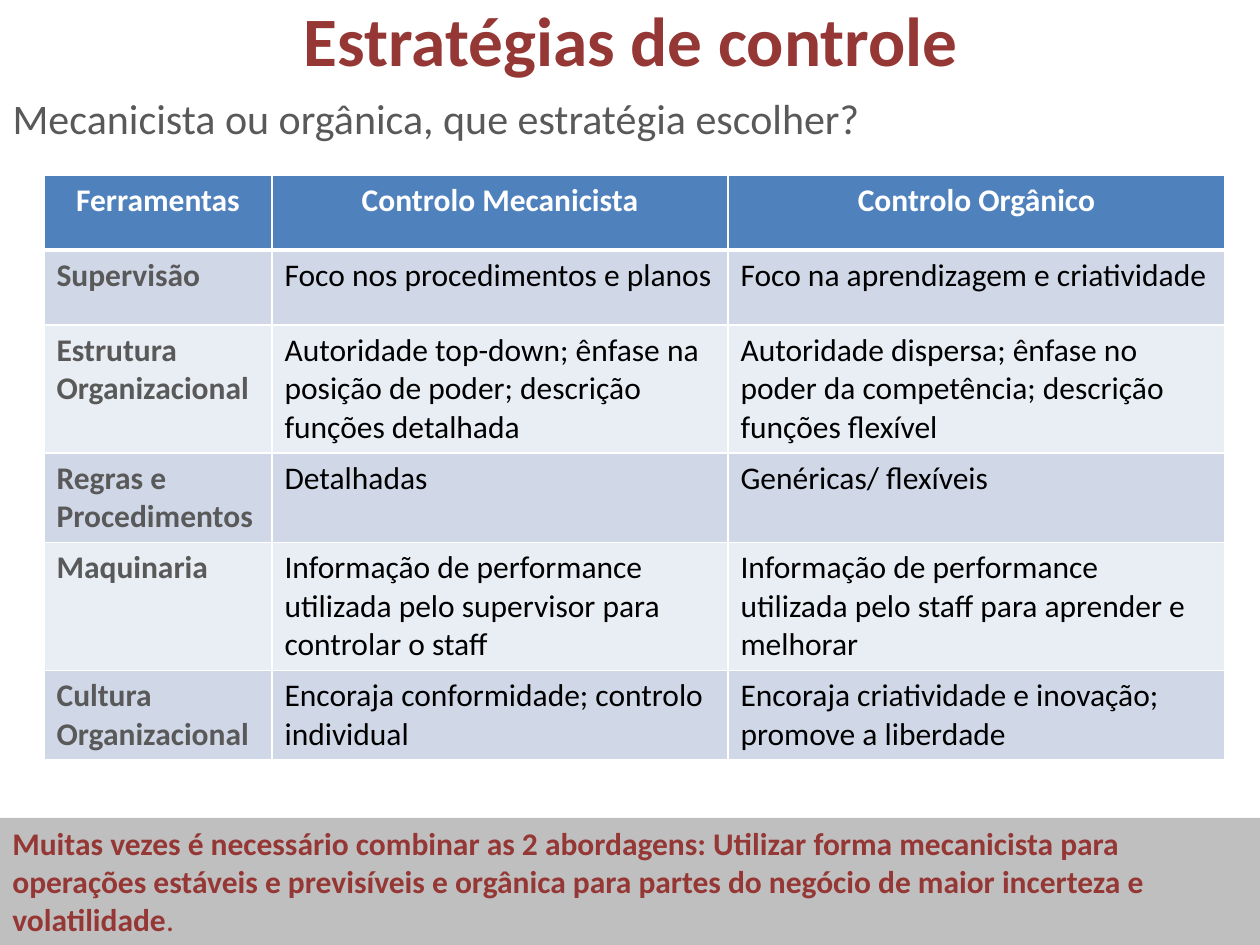
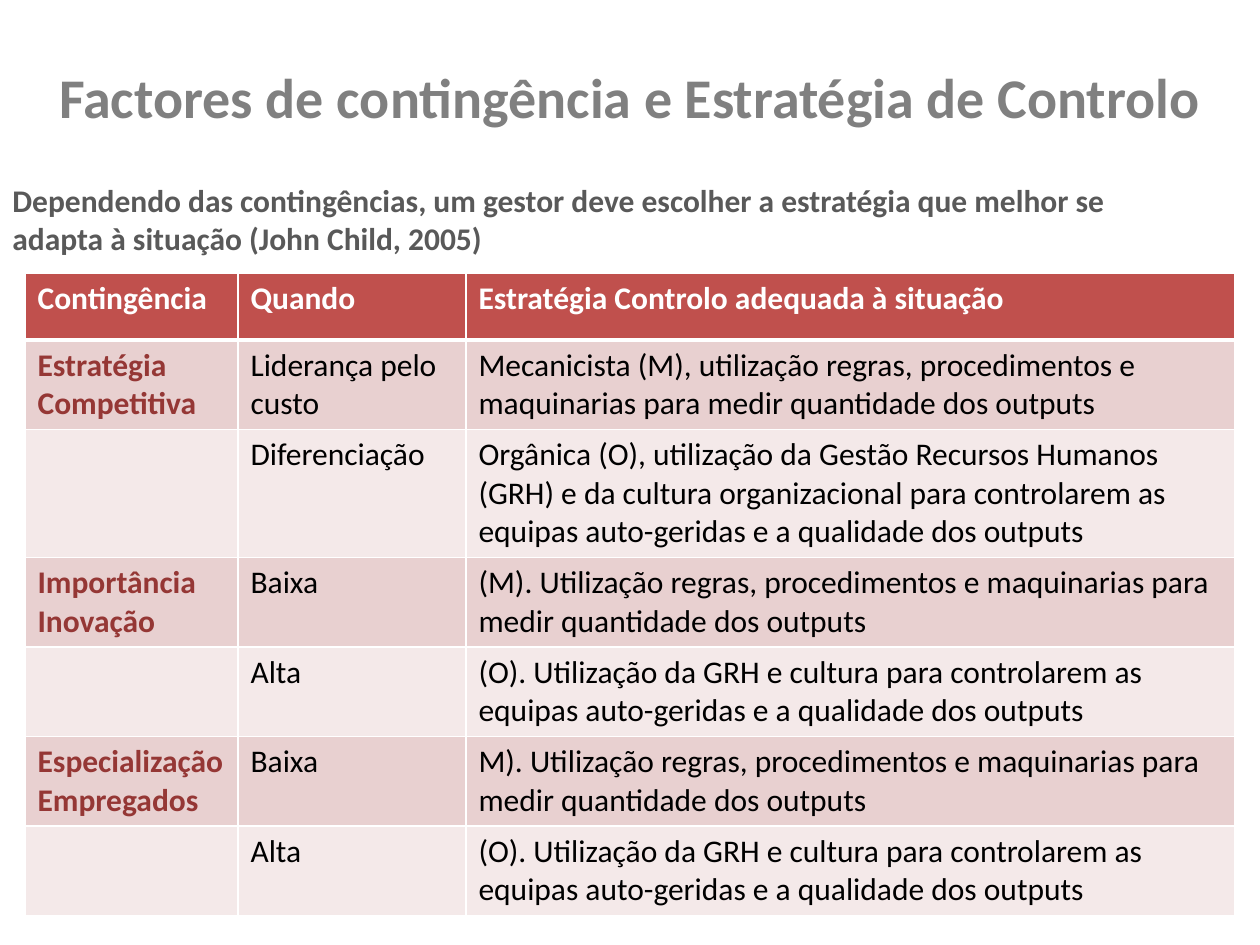
from lxml import etree
from pptx import Presentation, util as u
from pptx.dml.color import RGBColor
from pptx.enum import shapes, text
from pptx.oxml import ns

FONT = "Calibri"
WHITE = RGBColor(0xFF, 0xFF, 0xFF)
BLACK = RGBColor(0x00, 0x00, 0x00)
WINE = RGBColor(0x95, 0x37, 0x35)
DARK_GREY = RGBColor(0x59, 0x59, 0x59)
MID_GREY = RGBColor(0x80, 0x80, 0x80)
BAND_GREY = RGBColor(0xBF, 0xBF, 0xBF)
BLUES = [RGBColor(0x4F, 0x81, 0xBD), RGBColor(0xD0, 0xD8, 0xE8), RGBColor(0xE9, 0xED, 0xF4)]
REDS = [RGBColor(0xC0, 0x50, 0x4D), RGBColor(0xE8, 0xD0, 0xD0), RGBColor(0xF4, 0xE9, 0xE9)]
LEFT, CENTER = text.PP_ALIGN.LEFT, text.PP_ALIGN.CENTER

STRATEGIES = [
    ("Ferramentas", "Controlo Mecanicista", "Controlo Orgânico"),
    ("Supervisão", "Foco nos procedimentos e planos", "Foco na aprendizagem e criatividade"),
    ("Estrutura Organizacional",
     "Autoridade top-down; ênfase na posição de poder; descrição funções detalhada",
     "Autoridade dispersa; ênfase no poder da competência; descrição funções flexível"),
    ("Regras e Procedimentos", "Detalhadas", "Genéricas/ flexíveis"),
    ("Maquinaria",
     "Informação de performance utilizada pelo supervisor para controlar o staff",
     "Informação de performance utilizada pelo staff para aprender e melhorar"),
    ("Cultura Organizacional", "Encoraja conformidade; controlo individual",
     "Encoraja criatividade e inovação; promove a liberdade"),
]
RULES = "Utilização regras, procedimentos e maquinarias para medir quantidade dos outputs"
CULTURE = ("(O). Utilização da GRH e cultura para controlarem as equipas auto-geridas "
           "e a qualidade dos outputs")
CONTINGENCIES = [
    ("Contingência", "Quando", "Estratégia Controlo adequada à situação"),
    ("Estratégia Competitiva", "Liderança pelo custo",
     "Mecanicista (M), utilização regras, procedimentos e maquinarias para medir "
     "quantidade dos outputs"),
    ("", "Diferenciação",
     "Orgânica (O), utilização da Gestão Recursos Humanos (GRH) e da cultura organizacional "
     "para controlarem as equipas auto-geridas e a qualidade dos outputs"),
    ("Importância Inovação", "Baixa", "(M). " + RULES),
    ("", "Alta", CULTURE),
    ("Especialização Empregados", "Baixa", "M). " + RULES),
    ("", "Alta", CULTURE),
]


def px(count):
    """Turn pixels into EMU."""
    return u.Emu(round(count * 914400 / 126))


def style_text(frame, size, color, bold=False, align=LEFT):
    """Format every paragraph and run of a text frame."""
    for para in frame.paragraphs:
        para.alignment = align
        for span in para.runs:
            span.font.name = FONT
            span.font.size = u.Pt(size)
            span.font.bold = bold
            span.font.color.rgb = color


def place(shape, box):
    """Move a shape to a left, top, width, height box."""
    shape.left, shape.top, shape.width, shape.height = map(px, box)


def add_title(page, box, words, size, color):
    """Fill and move the title placeholder."""
    title = page.shapes.title
    place(title, box)
    frame = title.text_frame
    frame.text = words
    frame.auto_size = text.MSO_AUTO_SIZE.NONE
    frame.vertical_anchor = text.MSO_ANCHOR.MIDDLE
    style_text(frame, size, color, True, CENTER)


def add_question(page, box, words):
    """Fill and move the body placeholder, without a bullet."""
    body = page.placeholders[1]
    place(body, box)
    frame = body.text_frame
    frame.text = words
    frame.auto_size = text.MSO_AUTO_SIZE.NONE
    style_text(frame, 24, DARK_GREY)
    props = frame.paragraphs[0]._p.get_or_add_pPr()
    props.set("marL", str(px(48)))
    props.set("indent", str(-px(48)))
    etree.SubElement(props, ns.qn("a:buNone"))


def add_note(page, box, words, color, fill=None, ending=""):
    """Add a bold remark, on a coloured band if a fill is given."""
    if fill is None:
        note = page.shapes.add_textbox(*map(px, box))
    else:
        note = page.shapes.add_shape(shapes.MSO_SHAPE.RECTANGLE, *map(px, box))
        note.shadow.inherit = False
        note.fill.solid()
        note.fill.fore_color.rgb = fill
        note.line.fill.background()
    frame = note.text_frame
    frame.word_wrap = True
    frame.vertical_anchor = text.MSO_ANCHOR.TOP
    frame.text = words
    if ending:
        frame.paragraphs[0].add_run().text = ending
    style_text(frame, 18, color, True)
    if ending:
        frame.paragraphs[0].runs[-1].font.bold = False


def set_borders(cell, top, bottom):
    """Draw white cell borders with the given top and bottom points."""
    props = cell._tc.get_or_add_tcPr()
    widths = {"a:lnL": 1, "a:lnR": 1, "a:lnT": top, "a:lnB": bottom}
    for index, (tag, width) in enumerate(widths.items()):
        line = etree.Element(ns.qn(tag), w=str(u.Pt(width)))
        solid = etree.SubElement(line, ns.qn("a:solidFill"))
        etree.SubElement(solid, ns.qn("a:srgbClr"), val=str(WHITE))
        props.insert(index, line)


def add_grid(page, corner, widths, heights, rows, fills, label_color, header_align):
    """Add a banded table with a header row and a bold first column."""
    frame = page.shapes.add_table(len(rows), len(widths), *map(px, (*corner, sum(widths), sum(heights))))
    table = frame.table
    for column, width in zip(table.columns, widths):
        column.width = px(width)
    for r, (height, words) in enumerate(zip(heights, rows)):
        table.rows[r].height = px(height)
        header = r == 0
        fill = fills[0] if header else fills[2 - r % 2]
        for c, value in enumerate(words):
            cell = table.cell(r, c)
            cell.text = value
            cell.fill.solid()
            cell.fill.fore_color.rgb = fill
            color = WHITE if header else label_color if c == 0 else BLACK
            style_text(cell.text_frame, 18, color, header or c == 0,
                       header_align if header else LEFT)
            set_borders(cell, 3 if r == 1 else 1, 3 if header else 1)


def build_strategies(deck):
    """Build the slide that compares the two control strategies."""
    page = deck.slides.add_slide(deck.slide_layouts[1])
    add_title(page, (64, 0, 1134, 77), "Estratégias de controle", 39.6, WINE)
    add_question(page, (0, 86, 1134, 79), "Mecanicista ou orgânica, que estratégia escolher?")
    add_grid(page, (44, 175), (228, 456, 497), (75, 75, 128, 89, 128, 89),
             STRATEGIES, BLUES, DARK_GREY, CENTER)
    add_note(page, (0, 818, 1260, 127),
             "Muitas vezes é necessário combinar as 2 abordagens: Utilizar forma mecanicista para "
             "operações estáveis e previsíveis e orgânica para partes do negócio de maior "
             "incerteza e volatilidade", WINE, BAND_GREY, ".")


def build_contingencies(deck):
    """Build the slide that matches contingencies with strategies."""
    page = deck.slides.add_slide(deck.slide_layouts[5])
    add_title(page, (0, 38, 1260, 117), "Factores de contingência e Estratégia de Controlo",
              32, MID_GREY)
    add_grid(page, (25, 273), (213, 228, 769), (67, 89, 128, 89, 89, 89, 89),
             CONTINGENCIES, REDS, WINE, LEFT)
    add_note(page, (0, 175, 1181, 89),
             "Dependendo das contingências, um gestor deve escolher a estratégia que melhor se "
             "adapta à situação (John Child, 2005)", DARK_GREY)


def main():
    """Build and save the deck."""
    deck = Presentation()
    deck.slide_width, deck.slide_height = px(1260), px(945)
    build_strategies(deck)
    build_contingencies(deck)
    deck.save("out.pptx")


if __name__ == "__main__":
    main()
